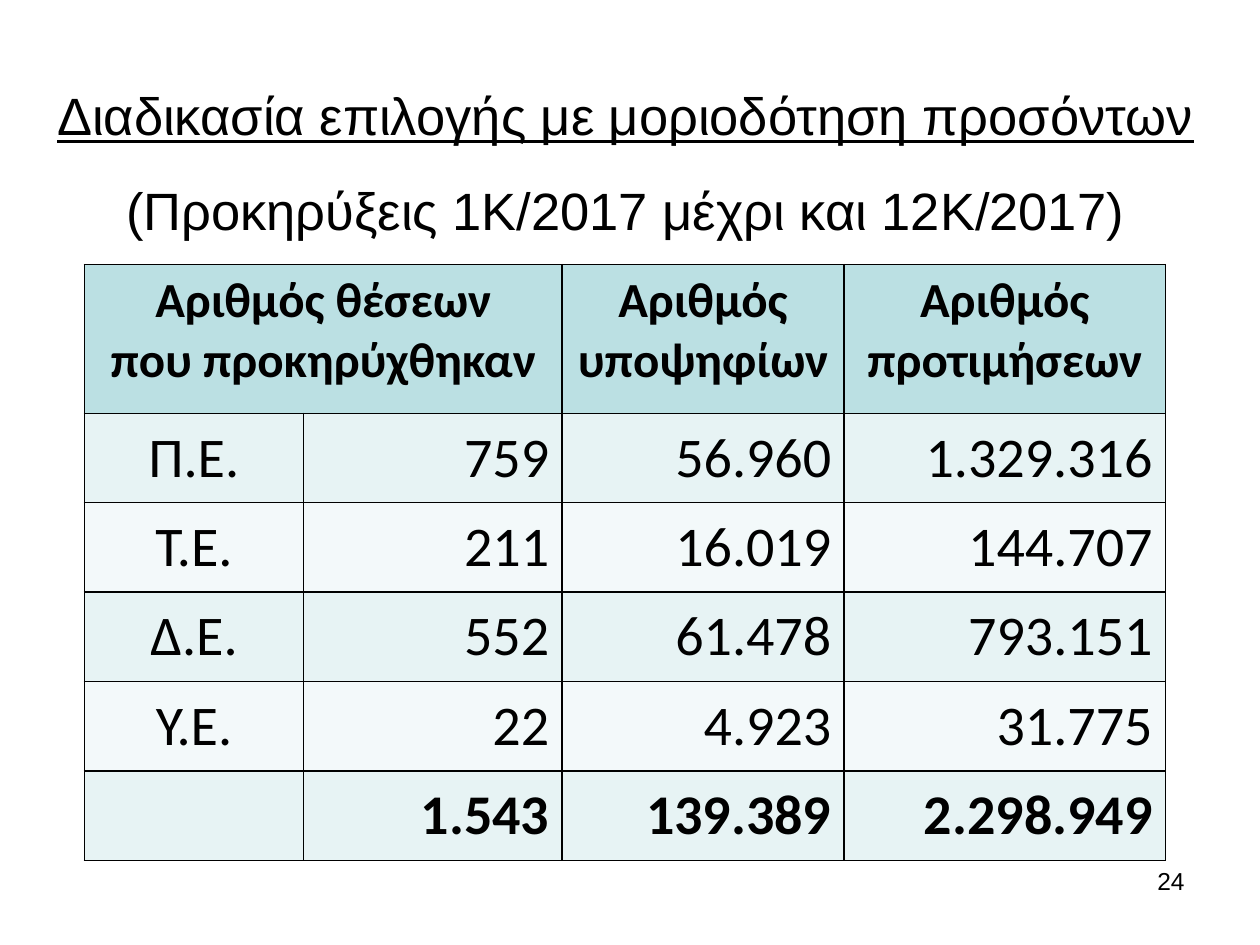
from lxml import etree
from pptx import Presentation
from pptx.dml.color import RGBColor
from pptx.enum.text import MSO_ANCHOR, PP_ALIGN
from pptx.oxml.ns import qn
from pptx.util import Inches, Pt

CENTER, RIGHT = PP_ALIGN.CENTER, PP_ALIGN.RIGHT
TOP, MIDDLE = MSO_ANCHOR.TOP, MSO_ANCHOR.MIDDLE
BLACK = RGBColor(0x00, 0x00, 0x00)
HEADER_FILL = RGBColor(0xBB, 0xE0, 0xE3)
BAND_FILLS = (RGBColor(0xE7, 0xF3, 0xF4), RGBColor(0xF3, 0xF9, 0xFA))

WIDTH, HEIGHT = 10, 7.5
COLUMNS = (1.74, 2.05, 2.24, 2.55)
HEADER_HEIGHT, ROW_HEIGHT = 1.18, 0.71
HEADERS = (
    (0, ("Αριθμός θέσεων", "που προκηρύχθηκαν")),
    (2, ("Αριθμός", "υποψηφίων")),
    (3, ("Αριθμός", "προτιμήσεων")),
)
ROWS = (
    ("Π.Ε.", "759", "56.960", "1.329.316"),
    ("Τ.Ε.", "211", "16.019", "144.707"),
    ("Δ.Ε.", "552", "61.478", "793.151"),
    ("Υ.Ε.", "22", "4.923", "31.775"),
    ("", "1.543", "139.389", "2.298.949"),
)


class SlideBuilder:
    heading_font = "Arial"
    table_font = "Calibri"

    def __init__(self, deck):
        self.page = deck.slides.add_slide(deck.slide_layouts[5])

    def area(self, left, top, width, height):
        return (Inches(left * WIDTH), Inches(top * HEIGHT),
                Inches(width * WIDTH), Inches(height * HEIGHT))

    def span(self, para, text, font, size, bold=False, underline=False):
        span = para.add_run()
        span.text = text
        span.font.name = font
        span.font.size = Pt(size)
        span.font.bold = bold
        span.font.underline = underline
        span.font.color.rgb = BLACK

    def title(self, area, first, second):
        box = self.page.shapes.title
        box.left, box.top, box.width, box.height = self.area(*area)
        frame = box.text_frame
        frame.word_wrap = True
        frame.vertical_anchor = MIDDLE
        para = frame.paragraphs[0]
        para.alignment = CENTER
        para.line_spacing = 1.5
        para.space_after = Pt(12)
        self.span(para, first, self.heading_font, 30, underline=True)
        para.add_line_break()
        self.span(para, second, self.heading_font, 30)

    def page_number(self, area, text):
        frame = self.page.shapes.add_textbox(*self.area(*area)).text_frame
        frame.word_wrap = True
        para = frame.paragraphs[0]
        para.alignment = RIGHT
        self.span(para, text, self.heading_font, 14)

    def borders(self, cell):
        properties = cell._tc.get_or_add_tcPr()
        for position, side in enumerate(("a:lnL", "a:lnR", "a:lnT", "a:lnB")):
            line = etree.Element(qn(side), w=str(Pt(1)))
            fill = etree.SubElement(line, qn("a:solidFill"))
            etree.SubElement(fill, qn("a:srgbClr"), val=str(BLACK))
            properties.insert(position, line)

    def cell_text(self, cell, lines, size, align, anchor, bold):
        cell.vertical_anchor = anchor
        frame = cell.text_frame
        for index, line in enumerate(lines):
            para = frame.add_paragraph() if index else frame.paragraphs[0]
            para.alignment = align
            self.span(para, line, self.table_font, size, bold)

    def table(self, area, headers, rows):
        shape = self.page.shapes.add_table(
            len(rows) + 1, len(COLUMNS), *self.area(*area))
        table = shape.table
        for column, width in zip(table.columns, COLUMNS):
            column.width = Inches(width)
        for index, row in enumerate(table.rows):
            row.height = Inches(ROW_HEIGHT if index else HEADER_HEIGHT)
            for cell in row.cells:
                cell.fill.solid()
                cell.fill.fore_color.rgb = (
                    BAND_FILLS[(index - 1) % 2] if index else HEADER_FILL)
                self.borders(cell)
        table.cell(0, 0).merge(table.cell(0, 1))
        for column, lines in headers:
            self.cell_text(table.cell(0, column), lines, 28, CENTER, TOP, True)
        for row, values in enumerate(rows, 1):
            for column, value in enumerate(values):
                if value:
                    self.cell_text(table.cell(row, column), (value,), 32,
                                   RIGHT if column else CENTER, MIDDLE,
                                   row == len(rows))


def main():
    deck = Presentation()
    deck.slide_width, deck.slide_height = Inches(WIDTH), Inches(HEIGHT)
    builder = SlideBuilder(deck)
    builder.title((0.028, 0.06, 0.937, 0.19),
                  "Διαδικασία επιλογής με μοριοδότηση προσόντων",
                  "(Προκηρύξεις 1Κ/2017 μέχρι και 12Κ/2017)")
    builder.table((0.067, 0.28, 0.858, 0.63), HEADERS, ROWS)
    builder.page_number((0.717, 0.91, 0.233, 0.07), "24")
    deck.save("out.pptx")


if __name__ == "__main__":
    main()
